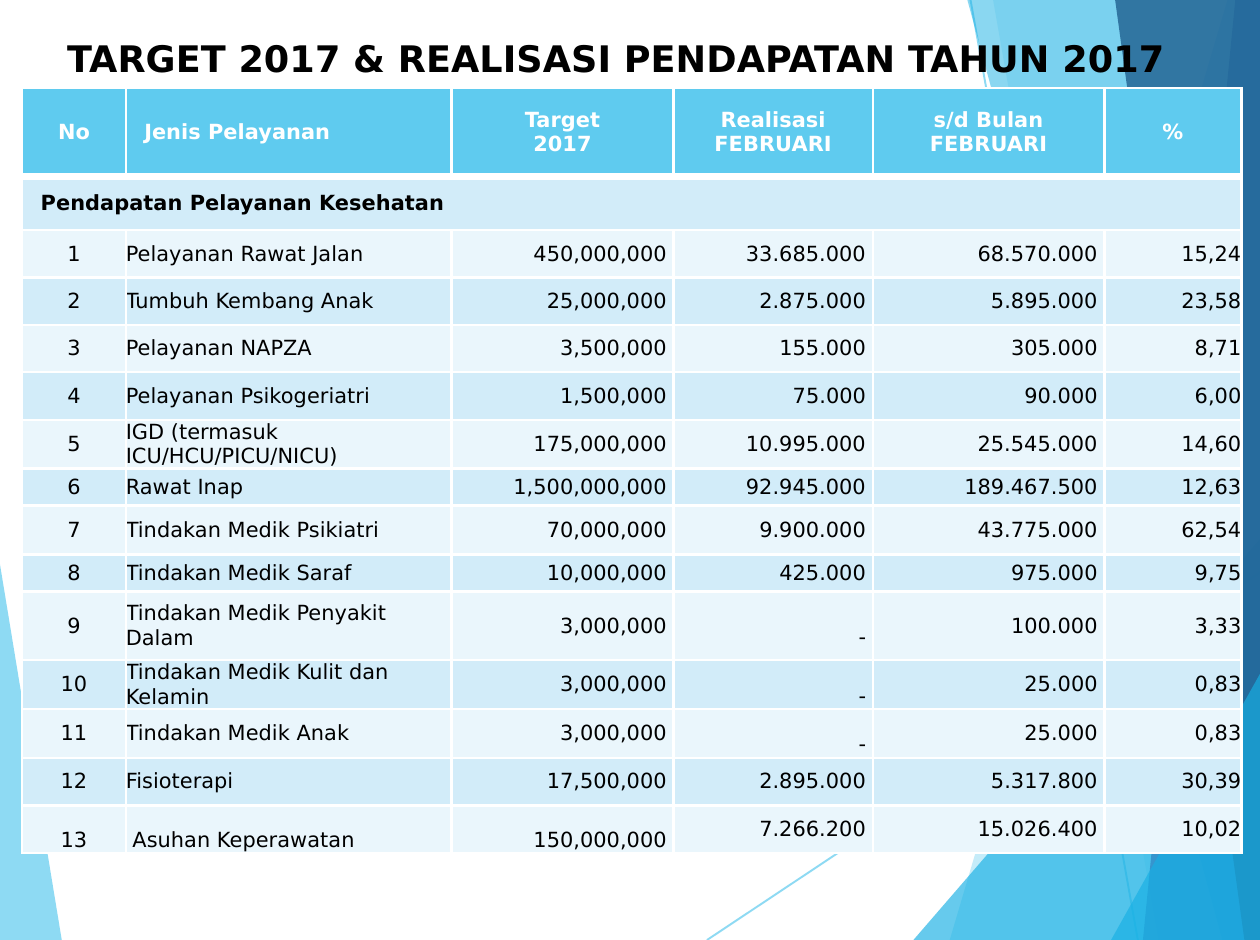
from lxml import etree
from pptx import Presentation
from pptx.dml.color import RGBColor
from pptx.enum.shapes import MSO_CONNECTOR
from pptx.enum.text import MSO_ANCHOR, PP_ALIGN
from pptx.oxml.ns import qn
from pptx.util import Cm, Pt

STRAIGHT = MSO_CONNECTOR.STRAIGHT
TOP, MIDDLE, BOTTOM = MSO_ANCHOR.TOP, MSO_ANCHOR.MIDDLE, MSO_ANCHOR.BOTTOM
LEFT, CENTER, RIGHT = PP_ALIGN.LEFT, PP_ALIGN.CENTER, PP_ALIGN.RIGHT

SKY, AZURE, BLUE, NAVY = "5FCBEF", "17B0E4", "2E83C3", "226292"
BLACK, WHITE = "000000", "FFFFFF"
BANDS = ("EAF6FC", "D2ECF9")
SPACE = 0.09  # width of one blank at the table's text size, in cm
DASH_DROP = 0.3

# Backdrop: colour, opacity in percent, corner points in cm
EDGE = 17.04
LEFT_WEDGE = (SKY, 70, [(-0.03, 7.44), (0.84, 12.73), (-0.03, 12.7)])
BACKDROP_LINES = [((9.55, 12.7), (EDGE, 7.72)), ((13.11, 0), (15.37, 12.7))]


def band(top_x, bottom_x):
    """Slanted band that reaches to the right edge of the slide."""
    return [(top_x, -0.03), (bottom_x, 12.7), (EDGE, 12.7), (EDGE, -0.03)]


def wedge(left_x, top_y):
    """Triangle in the lower right corner."""
    return [(left_x, 12.7), (EDGE, top_y), (EDGE, 12.7)]


RIGHT_FACETS = [
    (SKY, 36, band(16.59, 12.83)),
    (SKY, 20, band(13.41, 15.65)),
    (AZURE, 66, wedge(12.34, 7.26)),
    (AZURE, 50, band(13.06, 16.51)),
    (BLUE, 70, band(16.69, 15.44)),
    (NAVY, 82, band(15.06, 16.81)),
    (AZURE, 66, wedge(15.01, 9.07)),
]

# Table content
COLUMN_WIDTHS = [1.4, 4.4, 3.0, 2.69, 3.13, 1.85]
ROW_HEIGHTS = [1.2, 0.72, 0.64, 0.64, 0.64, 0.64, 0.66, 0.5, 0.66, 0.5,
               0.93, 0.66, 0.66, 0.64, 0.64]
HEADINGS = ["No", "Jenis Pelayanan", "Target\n2017", "Realisasi\nFEBRUARI",
            "s/d Bulan FEBRUARI", "%"]
SECTION = "Pendapatan Pelayanan Kesehatan"
SERVICES = [
    ("Pelayanan Rawat Jalan", "450,000,000", "33.685.000", "68.570.000", "15,24"),
    ("Tumbuh Kembang Anak", "25,000,000", "2.875.000", "5.895.000", "23,58"),
    ("Pelayanan NAPZA", "3,500,000", "155.000", "305.000", "8,71"),
    ("Pelayanan Psikogeriatri", "1,500,000", "75.000", "90.000", "6,00"),
    ("IGD (termasuk ICU/HCU/PICU/NICU)", "175,000,000", "10.995.000",
     "25.545.000", "14,60"),
    ("Rawat Inap", "1,500,000,000", "92.945.000", "189.467.500", "12,63"),
    ("Tindakan Medik Psikiatri", "70,000,000", "9.900.000", "43.775.000", "62,54"),
    ("Tindakan Medik Saraf", "10,000,000", "425.000", "975.000", "9,75"),
    ("Tindakan Medik Penyakit Dalam", "3,000,000", "-", "100.000", "3,33"),
    ("Tindakan Medik Kulit dan Kelamin", "3,000,000", "-", "25.000", "0,83"),
    ("Tindakan Medik Anak", "3,000,000", "-", "25.000", "0,83"),
    ("Fisioterapi", "17,500,000", "2.895.000", "5.317.800", "30,39"),
    ("Asuhan Keperawatan", "150,000,000", "7.266.200", "15.026.400", "10,02"),
]


def rgb(hex_code):
    return RGBColor.from_string(hex_code)


def apply(target, values):
    for name, value in values.items():
        setattr(target, name, value)


def margins(left=0, top=0, right=0, bottom=0):
    return {"margin_left": Cm(left), "margin_top": Cm(top),
            "margin_right": Cm(right), "margin_bottom": Cm(bottom)}


class SlideBuilder:
    font = "DejaVu Sans"

    def __init__(self, slide):
        self.slide = slide

    def fill_text(self, frame, text, size, color, bold=False, align=LEFT):
        frame.text = text
        for paragraph in frame.paragraphs:
            paragraph.alignment = align
            for run in paragraph.runs:
                apply(run.font, {"name": self.font, "size": Pt(size), "bold": bold})
                run.font.color.rgb = rgb(color)

    def fade(self, element, opacity):
        color = element.find(".//" + qn("a:srgbClr"))
        etree.SubElement(color, qn("a:alpha"), val=str(opacity * 1000))

    def facet(self, color, opacity, corners):
        points = [(Cm(x), Cm(y)) for x, y in corners]
        builder = self.slide.shapes.build_freeform(*points[0])
        builder.add_line_segments(points[1:], close=True)
        shape = builder.convert_to_shape()
        shape.shadow.inherit = False
        shape.fill.solid()
        shape.fill.fore_color.rgb = rgb(color)
        shape.line.fill.background()
        self.fade(shape._element.spPr, opacity)

    def thin_line(self, start, end):
        ends = [Cm(value) for value in (*start, *end)]
        connector = self.slide.shapes.add_connector(STRAIGHT, *ends)
        connector.line.width = Pt(0.75)
        connector.line.color.rgb = rgb(SKY)
        properties = connector._element.spPr
        self.fade(properties, 70)
        etree.SubElement(properties, qn("a:effectLst"))

    def title(self, text):
        title = self.slide.shapes.title
        apply(title, {"left": Cm(0.3), "top": Cm(0.36),
                      "width": Cm(16.05), "height": Cm(2.1)})
        apply(title.text_frame, {"word_wrap": True, "vertical_anchor": TOP})
        self.fill_text(title.text_frame, text, 14, BLACK, True, CENTER)
        # Bring the title in front of the backdrop
        self.slide.shapes._spTree.append(title._element)

    def table(self, left, top, widths, heights):
        frame = self.slide.shapes.add_table(
            len(heights), len(widths), Cm(left), Cm(top),
            Cm(sum(widths)), Cm(sum(heights)))
        for column, width in zip(frame.table.columns, widths):
            column.width = Cm(width)
        for row, height in zip(frame.table.rows, heights):
            row.height = Cm(height)
        return frame.table

    def cell(self, cell, text, fill, insets, anchor=MIDDLE, bottom_line=1, **style):
        apply(cell, {**insets, "vertical_anchor": anchor})
        self.fill_text(cell.text_frame, text, 8, **style)
        properties = cell._tc.get_or_add_tcPr()
        for side, width in (("L", 1), ("R", 1), ("T", 1), ("B", bottom_line)):
            border = etree.SubElement(properties, qn("a:ln" + side), w=str(Pt(width)))
            solid = etree.SubElement(border, qn("a:solidFill"))
            etree.SubElement(solid, qn("a:srgbClr"), val=WHITE)
        cell.fill.solid()
        cell.fill.fore_color.rgb = rgb(fill)


def main():
    deck = Presentation()
    apply(deck, {"slide_width": Cm(17.02), "slide_height": Cm(12.7)})
    page = SlideBuilder(deck.slides.add_slide(deck.slide_layouts[5]))

    # Backdrop
    page.facet(*LEFT_WEDGE)
    for start, end in BACKDROP_LINES:
        page.thin_line(start, end)
    for facet in RIGHT_FACETS:
        page.facet(*facet)

    page.title("TARGET 2017 & REALISASI PENDAPATAN TAHUN 2017")

    # Header and section rows
    income = page.table(0.3, 1.19, COLUMN_WIDTHS, ROW_HEIGHTS)
    roomy = margins(0.25, 0.13, 0.25, 0.13)
    for col, heading in enumerate(HEADINGS):
        page.cell(income.cell(0, col), heading, SKY, roomy, bottom_line=3,
                  color=WHITE, bold=True, align=LEFT if col == 1 else CENTER)
        page.cell(income.cell(1, col), "" if col else SECTION, BANDS[1], roomy,
                  color=BLACK, bold=True)
    income.cell(1, 0).merge(income.cell(1, len(HEADINGS) - 1))

    # Service rows; the last one is partly set at the bottom
    alignments = [CENTER, LEFT, RIGHT, RIGHT, RIGHT, RIGHT]
    for number, service in enumerate(SERVICES, start=1):
        last = number == len(SERVICES)
        for col, text in enumerate((str(number), *service)):
            insets = margins(left=SPACE if last and col == 1 else 0,
                             top=DASH_DROP if text == "-" else 0,
                             right=SPACE if col in (2, 3, 4) else 0)
            page.cell(income.cell(number + 1, col), text, BANDS[(number - 1) % 2],
                      insets, BOTTOM if last and col < 3 else MIDDLE,
                      color=BLACK, align=alignments[col])

    deck.save("out.pptx")


if __name__ == "__main__":
    main()
